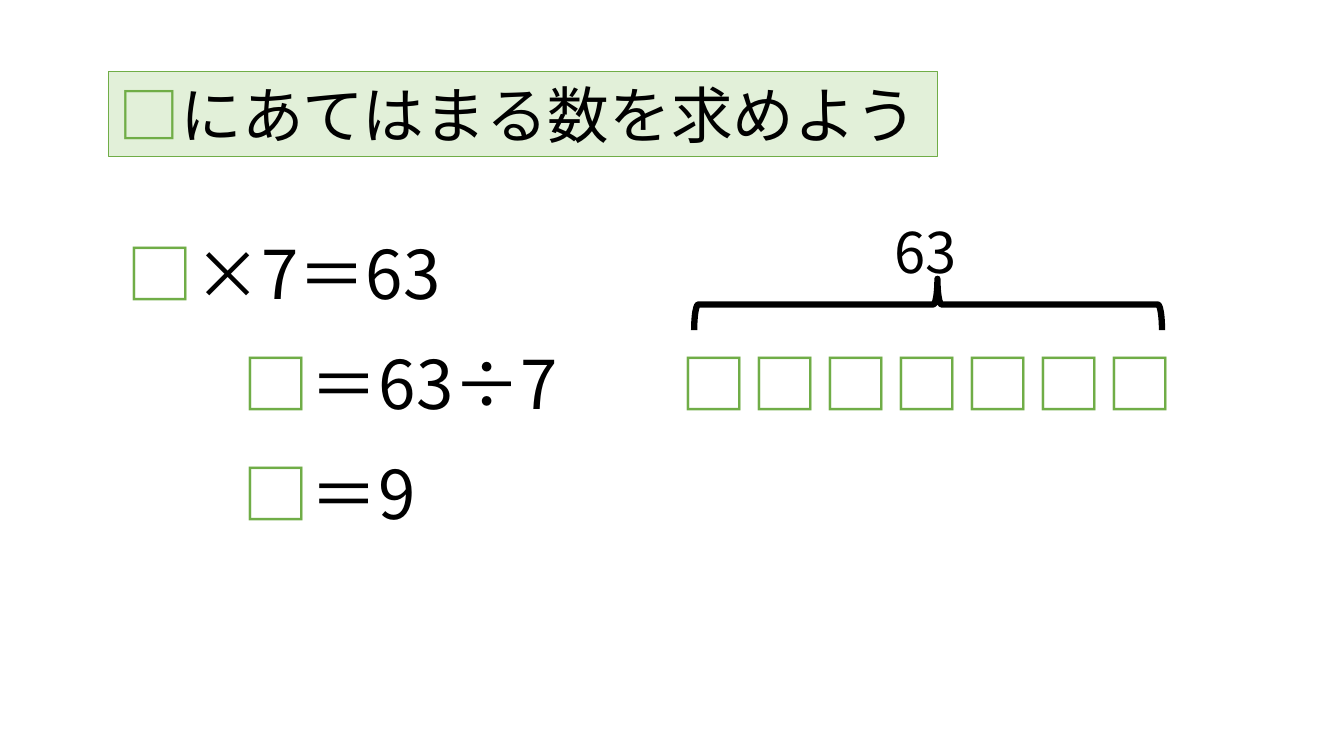
from dataclasses import dataclass

from pptx import Presentation
from pptx.dml.color import RGBColor
from pptx.enum.lang import MSO_LANGUAGE_ID as Language
from pptx.enum.shapes import MSO_SHAPE as Shape
from pptx.enum.text import MSO_ANCHOR as Anchor, MSO_AUTO_SIZE as AutoSize, PP_ALIGN as Align
from pptx.oxml.ns import qn
from pptx.util import Inches, Pt


@dataclass(frozen=True)
class Theme:
    font: str = "Noto Sans CJK JP"
    ink: RGBColor = RGBColor(0x00, 0x00, 0x00)
    green: RGBColor = RGBColor(0x70, 0xAD, 0x47)
    pale_green: RGBColor = RGBColor(0xE2, 0xF0, 0xD9)
    equation_size: int = 48
    title_size: int = 44
    total_size: int = 40


class LessonSlide:
    """Holds the theme and the slide being drawn."""

    def __init__(self, slide, theme):
        self.slide = slide
        self.theme = theme

    def fill_line(self, shape, text, size):
        """Put in one line of text, with a leading □ in green."""
        frame = shape.text_frame
        frame.word_wrap = False
        frame.auto_size = AutoSize.SHAPE_TO_FIT_TEXT
        paragraph = frame.paragraphs[0]
        paragraph.alignment = Align.LEFT
        known = text.removeprefix("□")
        for part in ("□" if known != text else "", known):
            if not part:
                continue
            run = paragraph.add_run()
            run.text = part
            font = run.font
            font.size = Pt(size)
            font.name = self.theme.font
            font.language_id = Language.JAPANESE
            font.color.rgb = self.theme.green if part == "□" else self.theme.ink
            # East Asian typeface for the Japanese characters
            properties = run._r.get_or_add_rPr()
            east_asian = properties.makeelement(qn("a:ea"), {"typeface": self.theme.font})
            properties.find(qn("a:latin")).addnext(east_asian)

    def text(self, text, left, top, width, height=0.91, size=None):
        box = self.slide.shapes.add_textbox(
            Inches(left), Inches(top), Inches(width), Inches(height))
        self.fill_line(box, text, size or self.theme.equation_size)

    def banner(self, text, left, top, width, height):
        banner = self.slide.shapes.add_shape(
            Shape.RECTANGLE, Inches(left), Inches(top), Inches(width), Inches(height))
        banner.shadow.inherit = False
        banner.fill.solid()
        banner.fill.fore_color.rgb = self.theme.pale_green
        banner.line.color.rgb = self.theme.green
        banner.line.width = Pt(0.75)
        banner.text_frame.vertical_anchor = Anchor.MIDDLE
        self.fill_line(banner, text, self.theme.title_size)

    def brace(self, left, top, width, height):
        """Draw a right brace turned to point upwards."""
        brace = self.slide.shapes.add_shape(
            Shape.RIGHT_BRACE, Inches(left), Inches(top), Inches(width), Inches(height))
        brace.rotation = 270
        brace.adjustments[0] = 0.08
        brace.adjustments[1] = 0.52
        brace.shadow.inherit = False
        brace.fill.background()
        brace.line.color.rgb = self.theme.ink
        brace.line.width = Pt(4.5)


def main():
    presentation = Presentation()
    presentation.slide_width = Inches(13.33)
    presentation.slide_height = Inches(7.5)
    theme = Theme()
    lesson = LessonSlide(
        presentation.slides.add_slide(presentation.slide_layouts[6]), theme)

    # Equation and its solution steps
    first_row, second_row, third_row = (2.26 + 1.09 * row for row in range(3))
    lesson.text("□×7＝63", 1.16, first_row, 3.65)
    lesson.text("63÷7", 3.66, second_row, 2.31)
    lesson.text("9", 3.66, third_row, 0.68)
    for row_top in (third_row, second_row):
        lesson.text("□＝", 2.31, row_top, 1.55)

    # Seven equal unknowns under a brace with their total
    count, first_left, last_left = 7, 6.65, 10.88
    step = (last_left - first_left) / (count - 1)
    for index in range(count):
        lesson.text("□", first_left + index * step, second_row, 0.88)
    lesson.brace(8.95, 0.7, 0.51, 4.64)
    lesson.text("63", 8.77, 2.11, 1, 0.77, theme.total_size)

    # Title
    lesson.banner("□にあてはまる数を求めよう", 1.08, 0.71, 8.22, 0.84)

    presentation.save("out.pptx")


if __name__ == "__main__":
    main()
